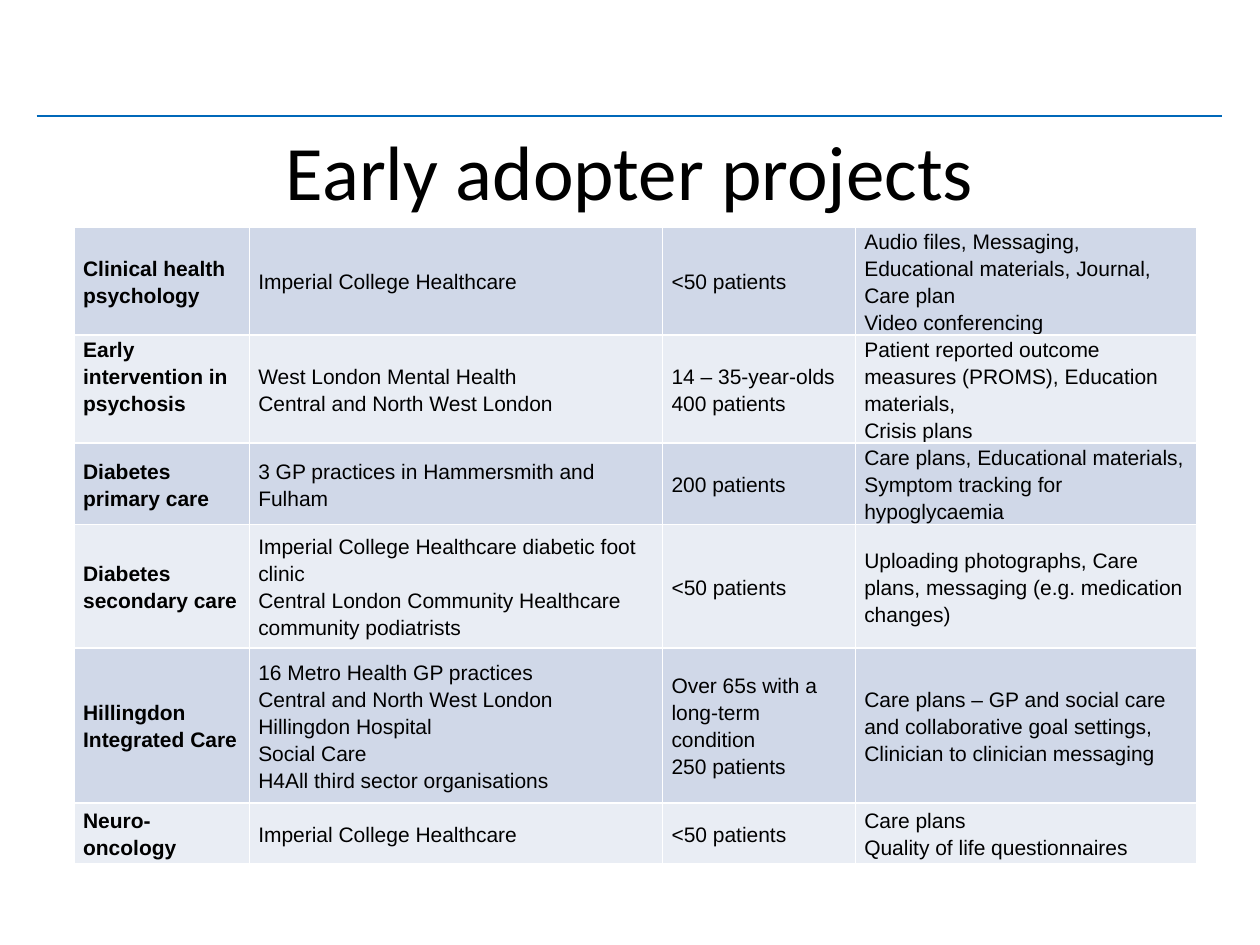
from lxml import etree
from pptx import Presentation
from pptx import util as u
from pptx.dml import color
from pptx.enum import shapes, text
from pptx.oxml import ns

PROJECTS = [
    ("Clinical health psychology", "Imperial College Healthcare", "<50 patients",
     "Audio files, Messaging, Educational materials, Journal, Care plan\nVideo conferencing"),
    ("Early intervention in psychosis",
     "West London Mental Health\nCentral and North West London",
     "14 – 35-year-olds\n400 patients",
     "Patient reported outcome measures (PROMS), Education materials,\nCrisis plans"),
    ("Diabetes primary care", "3 GP practices in Hammersmith and Fulham", "200 patients",
     "Care plans, Educational materials, Symptom tracking for hypoglycaemia"),
    ("Diabetes secondary care",
     "Imperial College Healthcare diabetic foot clinic\n"
     "Central London Community Healthcare community podiatrists",
     "<50 patients",
     "Uploading photographs, Care plans, messaging (e.g. medication changes)"),
    ("Hillingdon Integrated Care",
     "16 Metro Health GP practices\nCentral and North West London\nHillingdon Hospital\n"
     "Social Care\nH4All third sector organisations",
     "Over 65s with a long-term condition\n250 patients",
     "Care plans – GP and social care and collaborative goal settings, "
     "Clinician to clinician messaging"),
    ("Neuro-oncology", "Imperial College Healthcare", "<50 patients",
     "Care plans\nQuality of life questionnaires"),
]
COLUMN_WIDTHS = [1.39, 3.28, 1.53, 2.71]
ROW_HEIGHTS = [0.73, 0.73, 0.48, 0.98, 1.23, 0.48]
TOP_ALIGNED = {"Early intervention in psychosis"}


def rgb(value):
    """Return the colour for a hex string."""
    return color.RGBColor.from_string(value)


def assign(target, formats):
    """Set each named attribute on the target."""
    for name, value in formats.items():
        setattr(target, name, value)


class SlideBuilder:
    """Hold the style and the current page, and add elements to it."""

    ink = "000000"
    rule = "0068B9"
    border = "FFFFFF"
    bands = ("D0D8E8", "E9EDF4")
    title_font = {"name": "Calibri", "size": u.Pt(44), "bold": False}
    cell_font = {"name": "Arial", "size": u.Pt(12)}
    cell_format = {"margin_left": u.Inches(0.07), "margin_right": u.Inches(0.07),
                   "margin_top": 0, "margin_bottom": 0}

    def __init__(self, deck):
        """Start a title-only page in the deck."""
        self.page = deck.slides.add_slide(deck.slide_layouts[5])

    def add_span(self, para, words, font):
        """Put formatted words in a paragraph."""
        span = para.add_run()
        span.text = words
        assign(span.font, font)
        span.font.color.rgb = rgb(self.ink)

    def title(self, words, left, top, width, height):
        """Place and fill the title placeholder."""
        box = self.page.shapes.title
        assign(box, {"left": u.Inches(left), "top": u.Inches(top),
                     "width": u.Inches(width), "height": u.Inches(height)})
        box.text_frame.vertical_anchor = text.MSO_ANCHOR.MIDDLE
        para = box.text_frame.paragraphs[0]
        para.alignment = text.PP_ALIGN.CENTER
        self.add_span(para, words, self.title_font)

    def line(self, left, right, top):
        """Draw a horizontal rule."""
        rule = self.page.shapes.add_connector(
            shapes.MSO_CONNECTOR.STRAIGHT,
            u.Inches(left), u.Inches(top), u.Inches(right), u.Inches(top))
        rule.line.color.rgb = rgb(self.rule)
        rule.line.width = u.Pt(1)
        etree.SubElement(rule._element.spPr, ns.qn("a:effectLst"))

    def outline(self, cell):
        """Give a cell thin borders on all sides."""
        properties = cell._tc.get_or_add_tcPr()
        for place, side in enumerate(("lnL", "lnR", "lnT", "lnB")):
            edge = etree.Element(ns.qn(f"a:{side}"), w=str(u.Pt(1)))
            fill = etree.SubElement(edge, ns.qn("a:solidFill"))
            etree.SubElement(fill, ns.qn("a:srgbClr"), val=self.border)
            properties.insert(place, edge)

    def cell(self, cell, words, band, bold, anchor):
        """Fill and format one table cell."""
        assign(cell, {**self.cell_format, "vertical_anchor": anchor})
        cell.fill.solid()
        cell.fill.fore_color.rgb = rgb(band)
        self.outline(cell)
        frame = cell.text_frame
        for index, line in enumerate(words.split("\n")):
            para = frame.add_paragraph() if index else frame.paragraphs[0]
            para.line_spacing = 1.15
            self.add_span(para, line, {**self.cell_font, "bold": bold})

    def table(self, rows, widths, heights, left, top):
        """Add a banded table with bold row names."""
        table = self.page.shapes.add_table(
            len(rows), len(widths), u.Inches(left), u.Inches(top),
            u.Inches(sum(widths)), u.Inches(sum(heights))).table
        assign(table, {"first_row": False, "horz_banding": False})
        for column, width in zip(table.columns, widths):
            column.width = u.Inches(width)
        for index, (row, height) in enumerate(zip(rows, heights)):
            table.rows[index].height = u.Inches(height)
            for place, words in enumerate(row):
                anchor = text.MSO_ANCHOR.TOP if words in TOP_ALIGNED else text.MSO_ANCHOR.MIDDLE
                self.cell(table.cell(index, place), words, self.bands[index % 2],
                          place == 0, anchor)


def main():
    """Build and save the deck."""
    deck = Presentation()
    assign(deck, {"slide_width": u.Inches(10), "slide_height": u.Inches(7.5)})
    builder = SlideBuilder(deck)
    builder.line(0.29, 9.7, 0.92)
    builder.title("Early adopter projects", 0.5, 0.91, 9, 0.88)
    builder.table(PROJECTS, COLUMN_WIDTHS, ROW_HEIGHTS, 0.59, 1.8)
    deck.save("out.pptx")


if __name__ == "__main__":
    main()
